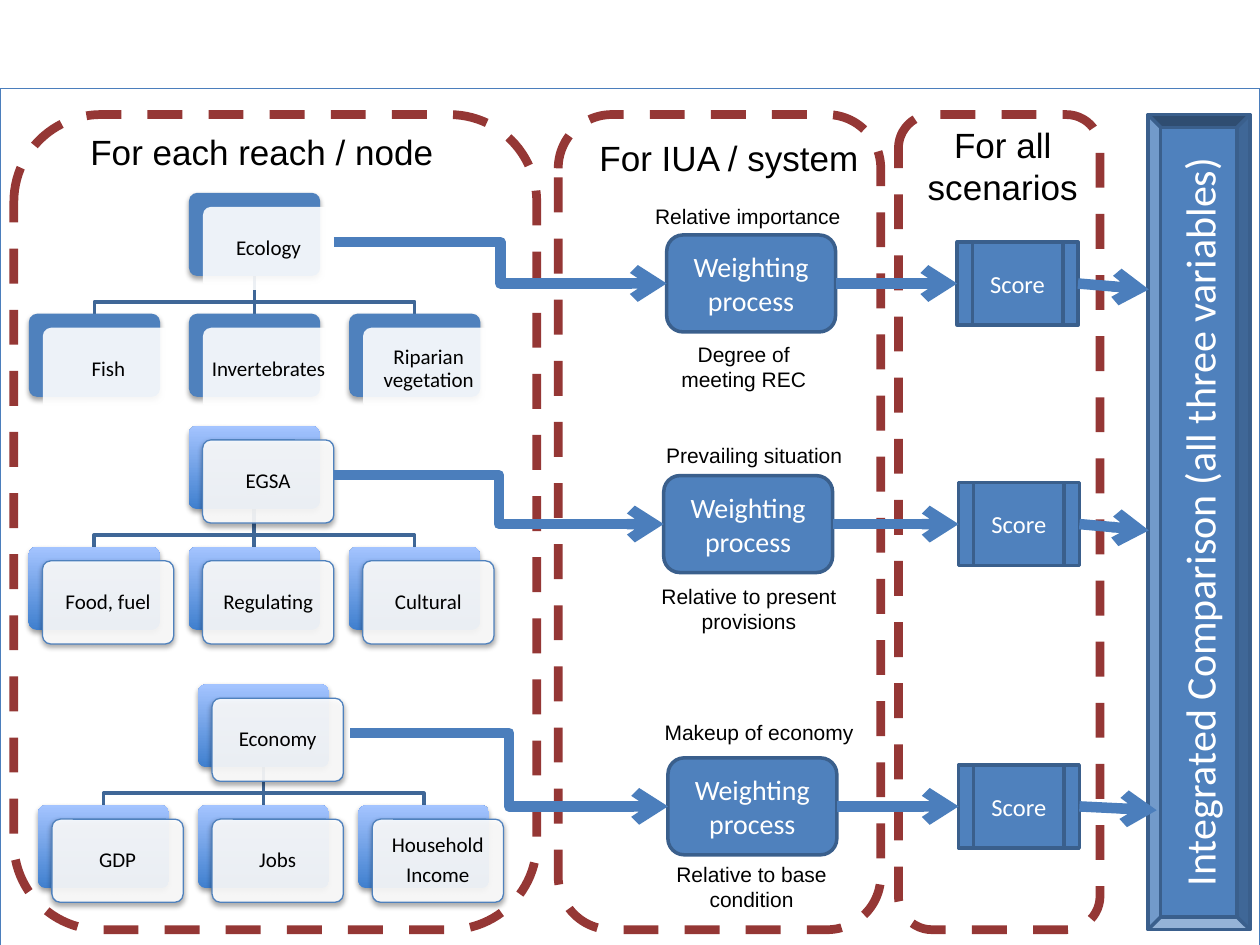
from lxml import etree
from pptx import Presentation
from pptx.dml.color import RGBColor
from pptx.enum.dml import MSO_LINE
from pptx.enum.shapes import MSO_CONNECTOR, MSO_SHAPE
from pptx.enum.text import MSO_ANCHOR, PP_ALIGN
from pptx.oxml.ns import qn
from pptx.util import Pt

RECT, ROUND = MSO_SHAPE.RECTANGLE, MSO_SHAPE.ROUNDED_RECTANGLE
SCORE, BEVEL = MSO_SHAPE.FLOWCHART_PREDEFINED_PROCESS, MSO_SHAPE.BEVEL
STRAIGHT, ELBOW = MSO_CONNECTOR.STRAIGHT, MSO_CONNECTOR.ELBOW
DASH = MSO_LINE.DASH
LEFT, CENTER, MIDDLE = PP_ALIGN.LEFT, PP_ALIGN.CENTER, MSO_ANCHOR.MIDDLE

BLUE, EDGE, ARROW = "4F81BD", "3A5F8C", "4B7EBC"
BRANCH, RED, WHITE, BLACK = "3F6797", "953735", "FFFFFF", "000000"
DEEP, PALE = "3F7FCE", "A4C4FF"

# Sizes in points
CARD_W, CARD_H, SHIFT = 75, 47.5, 8
PITCH, DROP, BEND = 91.5, 69.1, 62.3
BOX_W, BOX_H = 96.5, 55.4
SCORE_W, SCORE_H = 69, 47.5
NOTE_W = 126

# Root left and top, flat or shaded, root name, child names
TREES = [
    (108, 110.2, True, "Ecology", ["Fish", "Invertebrates", "Riparian vegetation"]),
    (107.8, 243.4, False, "EGSA", ["Food, fuel", "Regulating", "Cultural"]),
    (113.2, 391, False, "Economy", ["GDP", "Jobs", "Household\nIncome"]),
]
# Row middle, box left, score left, elbow start, arrow tip,
# caption above (left, top), caption below (left, top)
ROWS = [
    (162, 381, 547, (190.8, 138.3), (656.5, 165.4),
     "Relative importance", (364.3, 113), "Degree of\nmeeting REC", (362, 191.5)),
    (299.5, 379.3, 547.8, (190.8, 271.5), (656.5, 303.1),
     "Prevailing situation", (368, 249.1), "Relative to present\nprovisions", (365, 329.8)),
    (460.8, 381.7, 547.8, (200.2, 418.8), (661, 463),
     "Makeup of economy", (370.8, 407.5), "Relative to base\ncondition", (366.5, 488.9)),
]
# Left, width, heading, heading left, top, width, alignment
FRAMES = [
    (7.9, 298.8, "For each reach / node", 44.6, 71.3, 225, LEFT),
    (319, 184.3, "For IUA / system", 335.5, 74.2, 175, LEFT),
    (513.4, 115.2, "For all\nscenarios", 513, 67, 120, CENTER),
]


def color(value):
    return RGBColor.from_string(value)


def ink(line, value, width):
    line.color.rgb = color(value)
    line.width = Pt(width)


def write(shape, text, size, font, value, align=CENTER):
    frame = shape.text_frame
    frame.text = text
    for para in frame.paragraphs:
        para.alignment = align
        for run in para.runs:
            run.font.size, run.font.name = Pt(size), font
            run.font.color.rgb = color(value)
    return frame


def block(slide, kind, x, y, w, h, fill=None, edge=None, width=2):
    shape = slide.shapes.add_shape(kind, Pt(x), Pt(y), Pt(w), Pt(h))
    shape.shadow.inherit = False
    if fill:
        shape.fill.solid()
        shape.fill.fore_color.rgb = color(fill)
    else:
        shape.fill.background()
    if edge:
        ink(shape.line, edge, width)
    else:
        shape.line.fill.background()
    return shape


def label(slide, text, x, y, w, h, size, align=CENTER):
    box = slide.shapes.add_textbox(Pt(x), Pt(y), Pt(w), Pt(h))
    write(box, text, size, "Arial", BLACK, align).word_wrap = True


def step(slide, text, size, kind, x, y, w, h):
    shape = block(slide, kind, x, y, w, h, BLUE, EDGE)
    write(shape, text, size, "Calibri", WHITE).vertical_anchor = MIDDLE
    return shape


def shade(shape):
    """Give a shape a soft shadow below it."""
    effects = shape._element.spPr.find(qn("a:effectLst"))
    outer = etree.SubElement(effects, qn("a:outerShdw"), blurRad=str(Pt(3.1)),
                             dist=str(Pt(1.7)), dir="5400000", rotWithShape="0")
    tint = etree.SubElement(outer, qn("a:srgbClr"), val=BLACK)
    etree.SubElement(tint, qn("a:alpha"), val="36000")


def card(slide, text, x, y, flat):
    # Coloured card behind
    back = block(slide, ROUND, x, y, CARD_W, CARD_H, BLUE)
    back.adjustments[0] = 0.1
    shade(back)
    if not flat:
        back.fill.gradient()
        back.fill.gradient_angle = 90
        for stop, value in zip(back.fill.gradient_stops, (DEEP, PALE)):
            stop.color.rgb = color(value)
    # Slightly clear white card in front
    front = block(slide, ROUND, x + SHIFT, y + SHIFT, CARD_W, CARD_H,
                  WHITE, None if flat else BLUE, 0.75)
    front.adjustments[0] = 0.1
    tint = front._element.spPr.find(qn("a:solidFill")).find(qn("a:srgbClr"))
    etree.SubElement(tint, qn("a:alpha"), val="90000")
    if not flat:
        shade(front)
    frame = write(front, text, 12, "Calibri", BLACK)
    frame.vertical_anchor = MIDDLE
    frame.margin_left = frame.margin_right = Pt(3.6)
    frame.margin_top = frame.margin_bottom = Pt(3.6)
    for para in frame.paragraphs:
        para.line_spacing, para.space_after = 0.9, Pt(4.2)


def branch(slide, points):
    start, *rest = [(Pt(x), Pt(y)) for x, y in points]
    pen = slide.shapes.build_freeform(*start)
    pen.add_line_segments(rest, close=False)
    shape = pen.convert_to_shape()
    shape.shadow.inherit = False
    shape.fill.background()
    ink(shape.line, BRANCH, 2)


def tree(slide, x, y, flat, root, names):
    mid, base = x + CARD_W / 2, y + CARD_H
    for side in (-1, 0, 1):
        end = mid + side * PITCH
        bends = [(mid, y + BEND), (end, y + BEND)] if side else []
        branch(slide, [(mid, base), *bends, (end, y + DROP)])
    card(slide, root, x, y, flat)
    for i, name in enumerate(names):
        card(slide, name, x + (i - 1) * PITCH, y + DROP, flat)


def arrow(slide, kind, start, end, source=None, target=None):
    link = slide.shapes.add_connector(kind, *[Pt(v) for v in (*start, *end)])
    if source:
        link.begin_connect(source, 3)
    if target:
        link.end_connect(target, 1)
    ink(link.line, ARROW, 6)
    props = link._element.spPr
    etree.SubElement(props.find(qn("a:ln")), qn("a:tailEnd"), type="arrow")
    etree.SubElement(props, qn("a:effectLst"))


def row(slide, mid, left, right, start, tip, over, top, under, low):
    label(slide, over, *top, NOTE_W, 21.6, 12)
    label(slide, under, *low, NOTE_W, 36, 12)
    box = step(slide, "Weighting process", 16, ROUND, left, mid - BOX_H / 2, BOX_W, BOX_H)
    score = step(slide, "Score", 14, SCORE, right, mid - SCORE_H / 2, SCORE_W, SCORE_H)
    arrow(slide, ELBOW, start, (left, mid), target=box)
    arrow(slide, STRAIGHT, (left + BOX_W, mid), (right, mid), box, score)
    arrow(slide, STRAIGHT, (right + SCORE_W, mid), tip, score)


def main():
    deck = Presentation()
    deck.slide_width, deck.slide_height = Pt(720), Pt(540)
    slide = deck.slides.add_slide(deck.slide_layouts[6])

    # Panel and variable trees
    block(slide, RECT, 0, 50.4, 720, 491, WHITE, ARROW, 0.75)
    for item in TREES:
        tree(slide, *item)

    # Dashed stages with headings
    for x, w, text, left, top, width, align in FRAMES:
        frame = block(slide, ROUND, x, 65.5, w, 465.8, None, RED, 5)
        frame.line.dash_style = DASH
        label(slide, text, left, top, width, 31.7, 20, align)

    # Upright bar on the right
    bar = step(slide, "Integrated Comparison (all three variables)", 24,
               BEVEL, 452.2, 269.2, 465.8, 58.3)
    bar.rotation = 270

    # Weighting and scoring
    for item in ROWS:
        row(slide, *item)

    deck.save("out.pptx")


if __name__ == "__main__":
    main()
